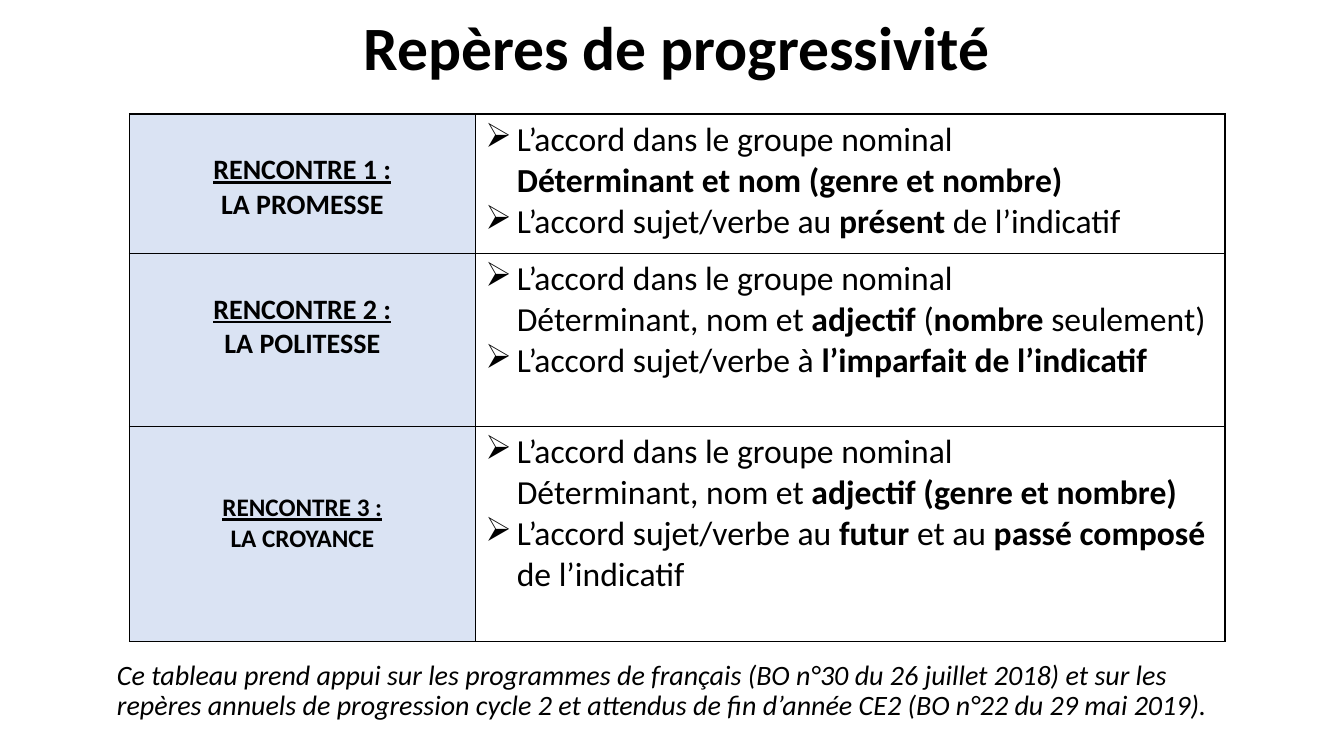
from dataclasses import dataclass

from pptx import Presentation
from pptx.dml.color import RGBColor as Rgb
from pptx.enum.text import MSO_ANCHOR as Anchor
from pptx.enum.text import MSO_AUTO_SIZE as Fit
from pptx.enum.text import PP_ALIGN as Align
from pptx.oxml import parse_xml as to_xml
from pptx.oxml.ns import nsdecls
from pptx.util import Pt

COLORS = {"ink": "000000", "label": "DAE3F3", "paper": "FFFFFF"}
FONT = "Calibri"
INDENT = Pt(22.5)
NOTE = (
    "Ce tableau prend appui sur les programmes de français (BO n°30 du 26 juillet 2018) "
    "et sur les repères annuels de progression cycle 2 et attendus de fin d’année CE2 "
    "(BO n°22 du 29 mai 2019)."
)


@dataclass
class Lesson:
    head: str
    theme: str
    size: float
    inset: float
    height: float
    points: list[list[str]]


LESSONS = [
    Lesson("RENCONTRE 1 :", "LA PROMESSE", 20, 28, 99.5, [
        ["L’accord dans le groupe nominal", "*Déterminant et nom (genre et nombre)*"],
        ["L’accord sujet/verbe au *présent *de l’indicatif"],
    ]),
    Lesson("RENCONTRE 2 :", "LA POLITESSE", 20, 28, 123.5, [
        ["L’accord dans le groupe nominal",
         "Déterminant, nom et *adjectif *(*nombre* seulement)"],
        ["L’accord sujet/verbe à *l’imparfait de l’indicatif*"],
    ]),
    Lesson("RENCONTRE 3 :", "LA CROYANCE", 18, 47.5, 153.5, [
        ["L’accord dans le groupe nominal",
         "Déterminant, nom et *adjectif (genre et nombre)*"],
        ["L’accord sujet/verbe au *futur* et au *passé composé *de l’indicatif"],
    ]),
]


def style(run, size: float, bold: bool = False, italic: bool = False,
          under: bool = False) -> None:
    font = run.font
    font.name, font.size = FONT, Pt(size)
    font.bold, font.italic, font.underline = bold, italic, under
    font.color.rgb = Rgb.from_string(COLORS["ink"])


def paint(cell, color: str) -> None:
    cell.fill.solid()
    cell.fill.fore_color.rgb = Rgb.from_string(COLORS[color])
    props = cell._tc.get_or_add_tcPr()
    for index, side in enumerate("LRTB"):
        props.insert(index, to_xml(
            f'<a:ln{side} {nsdecls("a")} w="{Pt(1)}"><a:solidFill>'
            f'<a:srgbClr val="{COLORS["ink"]}"/></a:solidFill></a:ln{side}>'))


def add_label(cell, lesson: Lesson) -> None:
    paint(cell, "label")
    cell.margin_top = Pt(lesson.inset)
    frame = cell.text_frame
    frame.text = f"{lesson.head}\n{lesson.theme}"
    for index, para in enumerate(frame.paragraphs):
        para.alignment = Align.CENTER
        style(para.runs[0], lesson.size, bold=True, under=index == 0)


def add_points(cell, points: list[list[str]]) -> None:
    paint(cell, "paper")
    frame = cell.text_frame
    for index, lines in enumerate(points):
        para = frame.add_paragraph() if index else frame.paragraphs[0]
        props = para._p.get_or_add_pPr()
        props.set("marL", str(INDENT))
        props.set("indent", str(-INDENT))
        props.append(to_xml(f'<a:buChar {nsdecls("a")} char="➢"/>'))
        for row, line in enumerate(lines):
            if row:
                para.add_line_break()
            for part, text in enumerate(line.split("*")):
                if text:
                    run = para.add_run()
                    run.text = text
                    style(run, 24, bold=part % 2 == 1)


def add_title(slide) -> None:
    title = slide.shapes.title
    title.left, title.top, title.width, title.height = Pt(62.5), Pt(14.5), Pt(842), Pt(42.5)
    frame = title.text_frame
    frame.text = "Repères de progressivité"
    frame.auto_size = Fit.NONE
    frame.vertical_anchor = Anchor.MIDDLE
    para = frame.paragraphs[0]
    para.alignment, para.line_spacing = Align.CENTER, 0.9
    style(para.runs[0], 44, bold=True)


def add_grid(slide) -> None:
    height = sum(lesson.height for lesson in LESSONS)
    table = slide.shapes.add_table(
        len(LESSONS), 2, Pt(92.5), Pt(81.5), Pt(782.5), Pt(height)).table
    table.first_row = table.horz_banding = False
    table.columns[0].width, table.columns[1].width = Pt(247), Pt(535.5)
    for index, lesson in enumerate(LESSONS):
        table.rows[index].height = Pt(lesson.height)
        add_label(table.cell(index, 0), lesson)
        add_points(table.cell(index, 1), lesson.points)


def add_note(slide) -> None:
    frame = slide.shapes.add_textbox(Pt(76.5), Pt(468.5), Pt(828), Pt(60)).text_frame
    frame.word_wrap = True
    frame.text = NOTE
    para = frame.paragraphs[0]
    para.line_spacing, para.space_before = 0.9, Pt(10)
    style(para.runs[0], 20, italic=True)


def main() -> None:
    deck = Presentation()
    deck.slide_width, deck.slide_height = Pt(960), Pt(540)
    slide = deck.slides.add_slide(deck.slide_layouts[5])
    add_title(slide)
    add_note(slide)
    add_grid(slide)
    deck.save("out.pptx")


if __name__ == "__main__":
    main()
